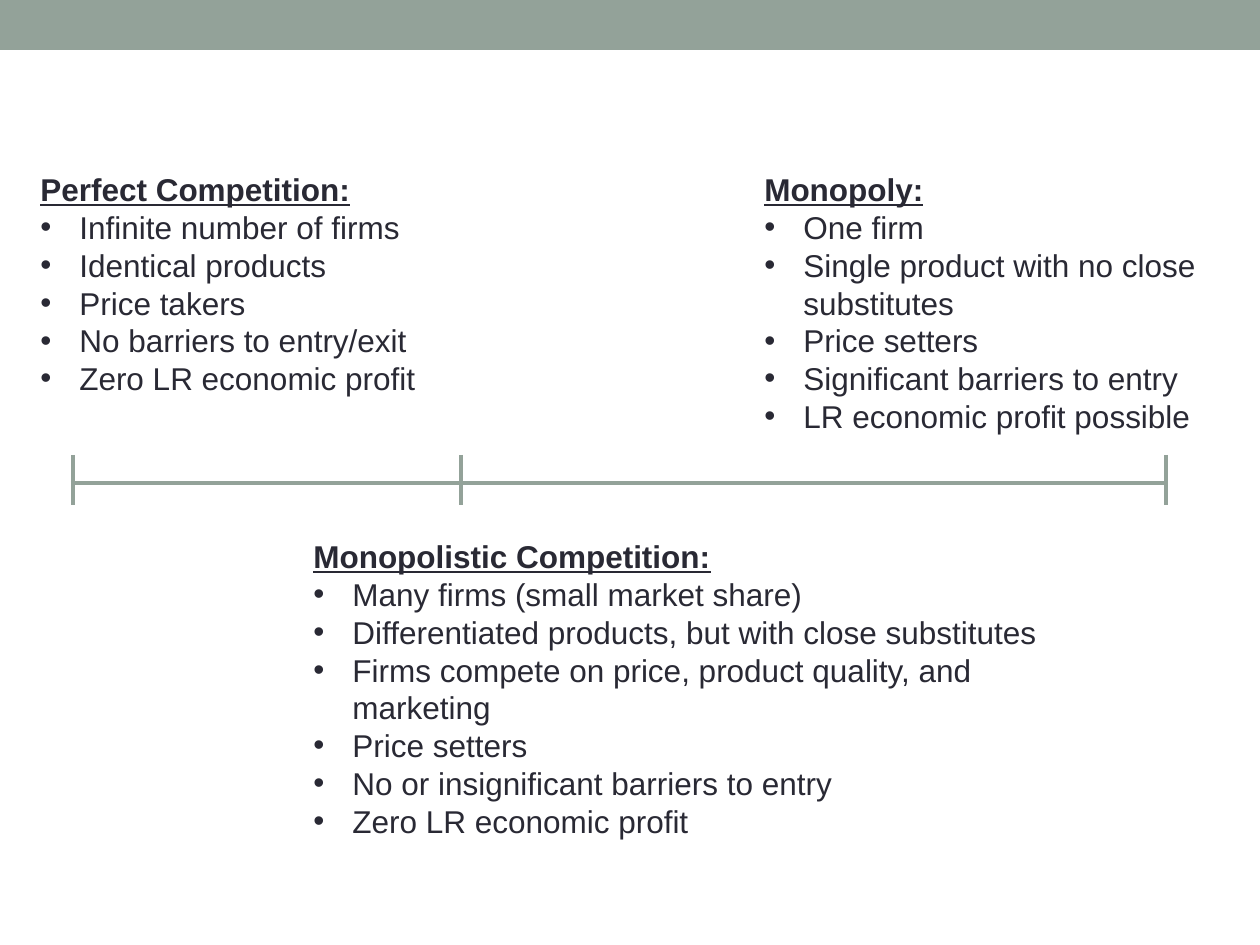
from lxml.etree import SubElement
from pptx import Presentation
from pptx.dml.color import RGBColor
from pptx.enum.shapes import MSO_CONNECTOR, MSO_SHAPE
from pptx.enum.text import MSO_AUTO_SIZE
from pptx.oxml.ns import qn
from pptx.util import Emu, Pt

# Content: (left, top, width, height), wrap, heading, points
MARKETS = [
    ((28, 164, 403, 242), False, "Perfect Competition:", [
        "Infinite number of firms",
        "Identical products",
        "Price takers",
        "No barriers to entry/exit",
        "Zero LR economic profit",
    ]),
    ((752, 164, 476, 280), True, "Monopoly:", [
        "One firm",
        "Single product with no close substitutes",
        "Price setters",
        "Significant barriers to entry",
        "LR economic profit possible",
    ]),
    ((301, 531, 774, 318), True, "Monopolistic Competition:", [
        "Many firms (small market share)",
        "Differentiated products, but with close substitutes",
        "Firms compete on price, product quality, and marketing",
        "Price setters",
        "No or insignificant barriers to entry",
        "Zero LR economic profit",
    ]),
]
AXIS = (71, 1166, 483)  # start, end, height on the slide
TICKS = [73, 461, 1166]
TICK_TOP, TICK_END = 455, 505
INDENT = 39
SAGE, INK = "93A299", "292934"
FONT = {"name": "Arial", "size": Pt(18)}


def px(n):
    return Emu(n * 914400 // 126)


def tint(code):
    return RGBColor.from_string(code)


def add_line(slide, x1, y1, x2, y2):
    line = slide.shapes.add_connector(
        MSO_CONNECTOR.STRAIGHT, px(x1), px(y1), px(x2), px(y2))
    line.line.color.rgb = tint(SAGE)
    line.line.width = Pt(2.08)
    SubElement(line._element.spPr, qn("a:effectLst"))


def add_bullet(para):
    props = para._p.get_or_add_pPr()
    props.set("marL", str(px(INDENT)))
    props.set("indent", str(-px(INDENT)))
    SubElement(props, qn("a:buFont"), typeface="Arial")
    SubElement(props, qn("a:buChar"), char="•")


def add_market(slide, box, wrap, title, points):
    frame = slide.shapes.add_textbox(*map(px, box)).text_frame
    frame.word_wrap = wrap
    frame.auto_size = MSO_AUTO_SIZE.SHAPE_TO_FIT_TEXT
    for i, text in enumerate([title, *points]):
        para = frame.add_paragraph() if i else frame.paragraphs[0]
        run = para.add_run()
        run.text = text
        head = i == 0
        for key, value in {**FONT, "bold": head, "underline": head}.items():
            setattr(run.font, key, value)
        run.font.color.rgb = tint(INK)
        if not head:
            add_bullet(para)


def main():
    deck = Presentation()
    deck.slide_width, deck.slide_height = px(1260), px(945)
    slide = deck.slides.add_slide(deck.slide_layouts[6])

    # Top band
    band = slide.shapes.add_shape(
        MSO_SHAPE.RECTANGLE, 0, 0, px(1260), px(50))
    band.shadow.inherit = False
    band.fill.solid()
    band.fill.fore_color.rgb = tint(SAGE)
    band.line.fill.background()

    # Scale with its ticks
    start, end, y = AXIS
    add_line(slide, start, y, end, y)
    for x in TICKS:
        add_line(slide, x, TICK_TOP, x, TICK_END)

    # Market descriptions
    for market in MARKETS:
        add_market(slide, *market)

    deck.save("out.pptx")


if __name__ == "__main__":
    main()
